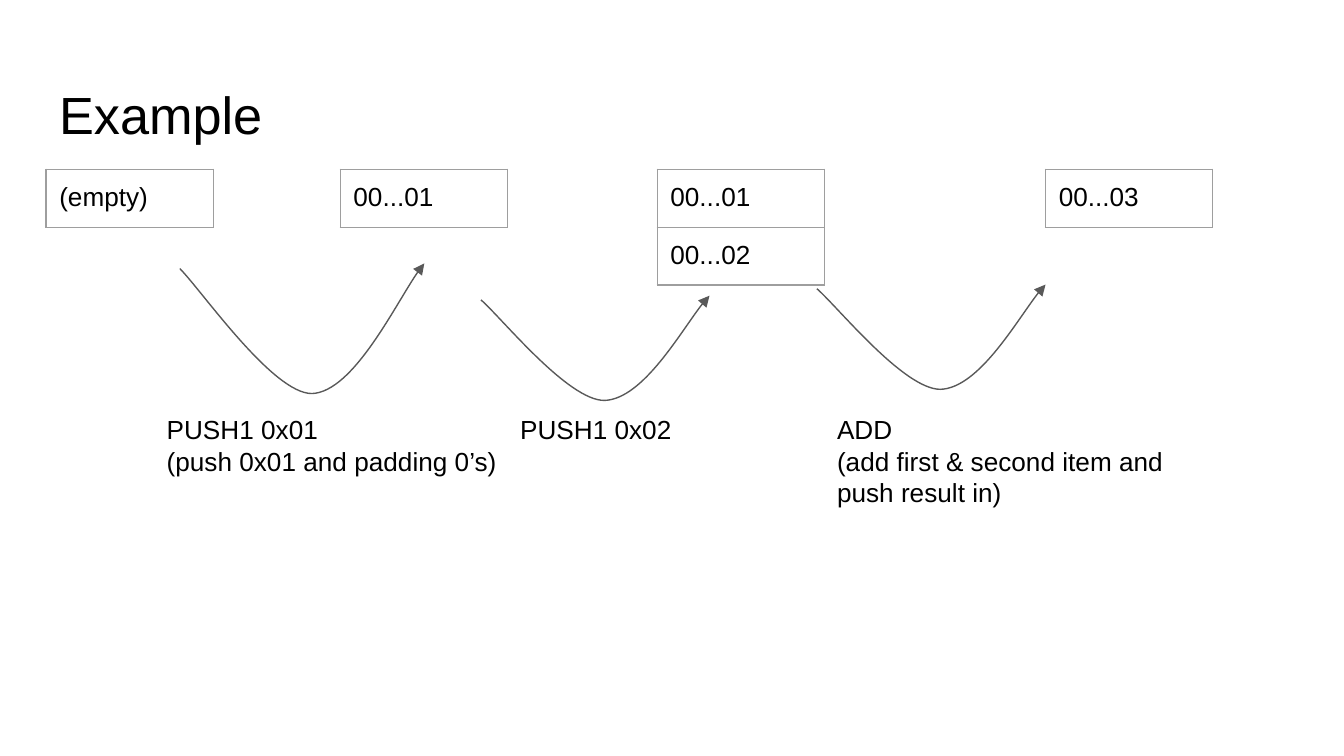
"""Build a slide that steps through stack states under PUSH1 and ADD."""
from lxml import etree
from pptx import Presentation
from pptx.dml.color import RGBColor
from pptx.enum.text import MSO_ANCHOR
from pptx.oxml import parse_xml
from pptx.oxml.ns import nsdecls, qn
from pptx.util import Cm, Pt

TOP = MSO_ANCHOR.TOP
COLORS = {"text": "000000", "border": "9E9E9E", "arrow": "595959"}
INSET = Cm(0.25)
COLUMN_WIDTH, ROW_HEIGHT, STACK_TOP = 3.16, 1.06, 3.2
LABEL_TOP, LABEL_WIDTH, LABEL_HEIGHT = 7.57, 7.04, 2.69


def write_text(frame, text, size=14, color="text", font="Arial"):
    for index, line in enumerate(text.split("\n")):
        para = frame.paragraphs[0] if index == 0 else frame.add_paragraph()
        span = para.add_run()
        span.text = line
        span.font.size = Pt(size)
        span.font.name = font
        span.font.color.rgb = RGBColor.from_string(COLORS[color])


def add_text_box(page, text, left, top, width, height, **text_format):
    box = page.shapes.add_textbox(Cm(left), Cm(top), Cm(width), Cm(height))
    frame = box.text_frame
    frame.word_wrap = True
    frame.vertical_anchor = TOP
    frame.margin_left = frame.margin_right = INSET
    frame.margin_top = frame.margin_bottom = INSET
    write_text(frame, text, **text_format)


deck = Presentation()
deck.slide_width, deck.slide_height = Cm(25.4), Cm(14.29)
page = deck.slides.add_slide(deck.slide_layouts[6])

add_text_box(page, "Example", 0.87, 1.3, 23.67, 1.6, size=28)

stacks = [
    (0.87, ["(empty)"]),
    (6.43, ["00...01"]),
    (12.42, ["00...01", "00...02"]),
    (19.76, ["00...03"]),
]
for left, items in stacks:
    table = page.shapes.add_table(
        len(items), 1, Cm(left), Cm(STACK_TOP), Cm(COLUMN_WIDTH), Cm(ROW_HEIGHT * len(items))
    ).table
    table.first_row = table.horz_banding = False
    for row, item in enumerate(items):
        cell = table.cell(row, 0)
        cell.margin_left = cell.margin_right = INSET
        cell.margin_top = cell.margin_bottom = INSET
        write_text(cell.text_frame, item)
        properties = cell._tc.get_or_add_tcPr()
        for side in ("lnL", "lnR", "lnT", "lnB"):
            properties.append(parse_xml(
                f'<a:{side} {nsdecls("a")} w="{Pt(0.75)}"><a:solidFill>'
                f'<a:srgbClr val="{COLORS["border"]}"/></a:solidFill></a:{side}>'
            ))
        cell.fill.background()

labels = [
    (2.9, "PUSH1 0x01\n(push 0x01 and padding 0’s)"),
    (9.58, "PUSH1 0x02"),
    (15.57, "ADD\n(add first & second item and push result in)"),
]
for left, text in labels:
    add_text_box(page, text, left, LABEL_TOP, LABEL_WIDTH, LABEL_HEIGHT)

swoop = [(0, 0.04), (0.09, 0.21), (0.38, 1), (0.54, 1), (0.71, 0.99), (0.92, 0.17), (1, 0)]
arrows = [(3.4, 4.98, 4.62, 2.46), (9.09, 5.59, 4.32, 1.98), (15.44, 5.38, 4.32, 1.98)]
for left, top, width, height in arrows:
    points = [(Cm(left + x * width), Cm(top + y * height)) for x, y in swoop]
    builder = page.shapes.build_freeform(*points[0])
    builder.add_line_segments(points[1:], close=False)
    arrow = builder.convert_to_shape()
    arrow.shadow.inherit = False
    arrow.fill.background()
    arrow.line.color.rgb = RGBColor.from_string(COLORS["arrow"])
    arrow.line.width = Pt(0.75)
    etree.SubElement(arrow.line._get_or_add_ln(), qn("a:tailEnd"), type="triangle")
    segments = arrow._element.xpath(".//a:lnTo")
    outline = segments[0].getparent()
    for start in range(0, len(segments), 3):
        curve = etree.SubElement(outline, qn("a:cubicBezTo"))
        for segment in segments[start:start + 3]:
            curve.append(segment[0])
            outline.remove(segment)

deck.save("out.pptx")
